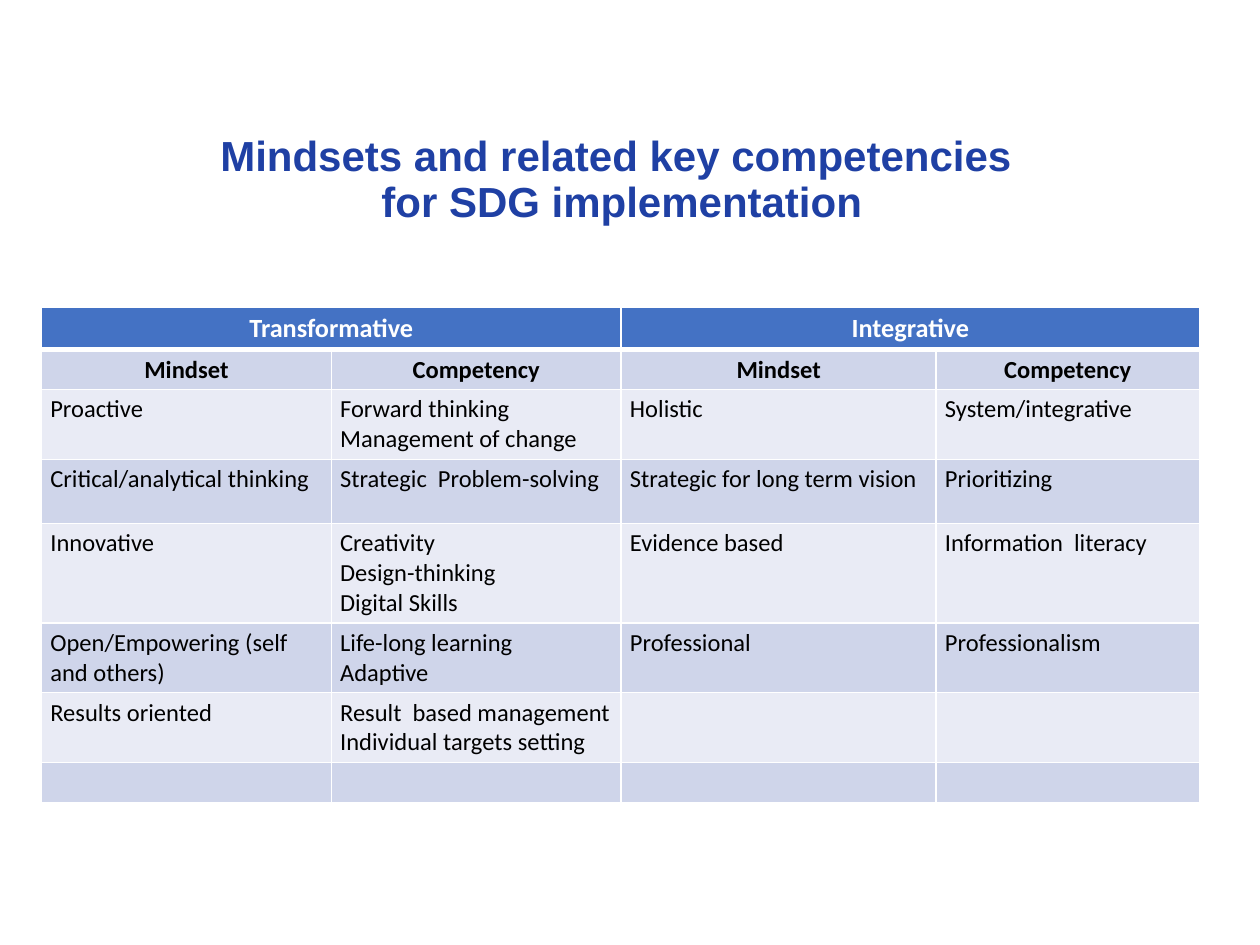
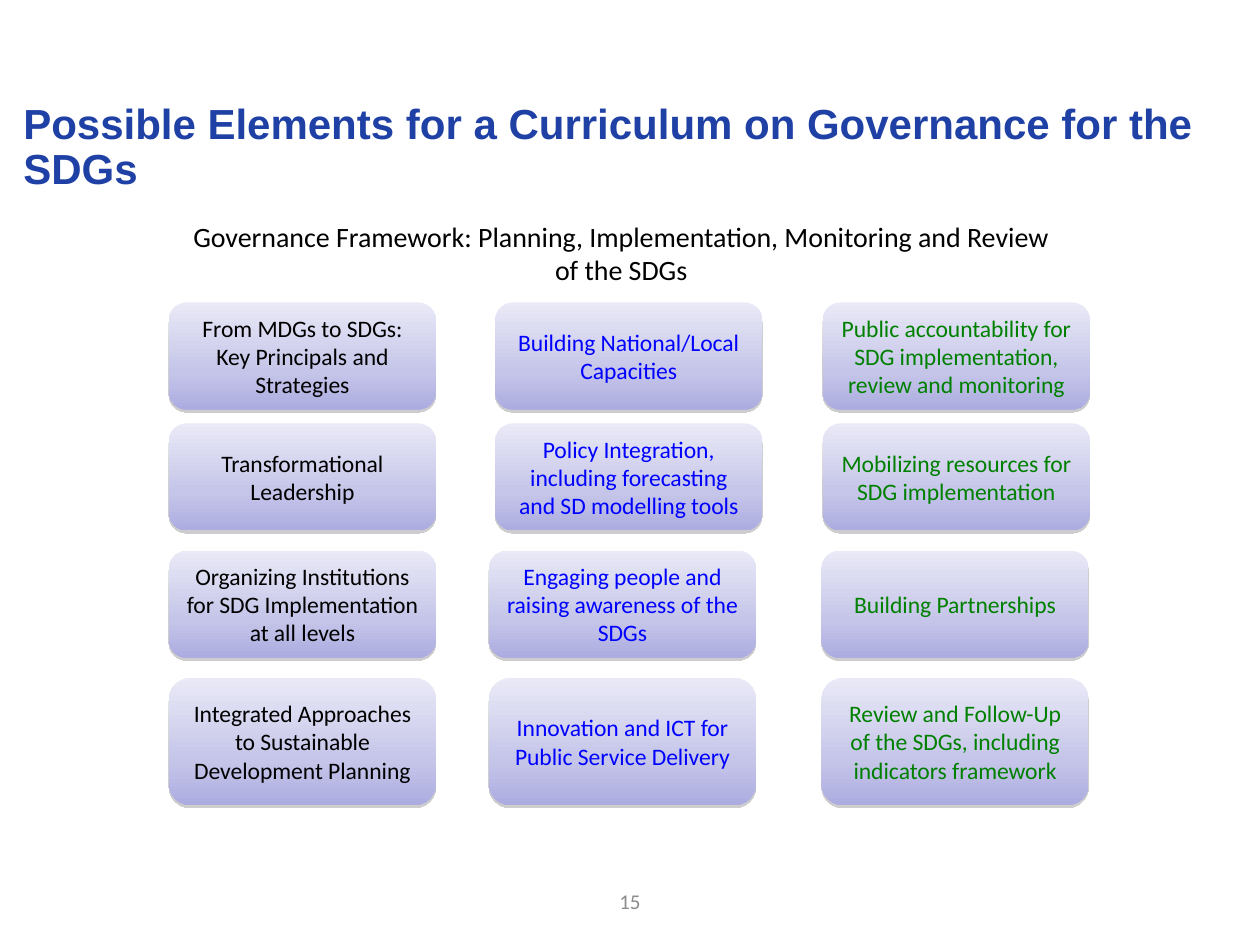
from dataclasses import dataclass
from typing import Any, Sequence

import lxml.etree
import pptx
import pptx.dml.color
import pptx.enum.shapes
import pptx.enum.text
import pptx.oxml
import pptx.oxml.ns
import pptx.util

ALIGN = pptx.enum.text.PP_ALIGN
ANCHOR = pptx.enum.text.MSO_ANCHOR
TITLE_ONLY_LAYOUT = 5
SLIDE_WIDTH, SLIDE_HEIGHT = pptx.util.Inches(10), pptx.util.Inches(7.5)
GRID_COLUMNS, GRID_ROWS = 100, 75


@dataclass(frozen=True)
class Theme:
    heading_font: str = "Arial"
    body_font: str = "Calibri"
    title: str = "1F40A4"
    text: str = "000000"
    inverse: str = "FFFFFF"
    muted: str = "8C8C8C"
    capacity: str = "0000FF"
    accountability: str = "008000"
    header_fill: str = "4472C4"
    band_fills: tuple[str, str] = ("CFD5EA", "E9EBF5")
    card_stops: tuple[tuple[int, str], ...] = ((0, "E9E9F7"), (65, "C5C5E9"), (100, "ACACE1"))
    card_shadow: str = "808080"
    title_size: float = 24
    subtitle_size: float = 16
    header_size: float = 15
    table_size: float = 14
    card_size: float = 13.5
    number_size: float = 12


THEME = Theme()


@dataclass(frozen=True)
class TextStyle:
    size: float
    color: str = THEME.text
    name: str = THEME.body_font
    bold: bool = False
    alignment: Any = ALIGN.CENTER
    line_spacing: float = 1.0


@dataclass(frozen=True)
class Area:
    """A rectangle in grid columns and rows."""
    left: float
    top: float
    width: float
    height: float

    def lengths(self) -> tuple[int, int, int, int]:
        return (across(self.left), down(self.top), across(self.width), down(self.height))


@dataclass(frozen=True)
class TopicColumn:
    """Cards of one colour; the lower two may start at another grid column."""
    upper_left: float
    lower_left: float
    color: str
    topics: tuple[str, ...]


@dataclass(frozen=True)
class CardRow:
    top: float
    height: float


CARD_WIDTH = 21.2
CARD_ROWS = (CardRow(24, 8.5), CardRow(33.6, 8.5), CardRow(43.7, 8.5), CardRow(53.8, 10.1))
TOPIC_COLUMNS = (
    TopicColumn(13.4, 13.4, THEME.text, (
        "From MDGs to SDGs:\nKey Principals and Strategies",
        "Transformational Leadership",
        "Organizing Institutions for SDG Implementation at all levels",
        "Integrated Approaches to Sustainable Development Planning")),
    TopicColumn(39.3, 38.8, THEME.capacity, (
        "Building National/Local Capacities",
        "Policy Integration, including forecasting and SD modelling tools",
        "Engaging people and raising awareness of the SDGs",
        "Innovation and ICT for Public Service Delivery")),
    TopicColumn(65.3, 65.2, THEME.accountability, (
        "Public accountability for SDG implementation, review and monitoring",
        "Mobilizing resources for SDG implementation",
        "Building Partnerships",
        "Review and Follow-Up of the SDGs, including indicators framework")),
)

TABLE_AREA = Area(3.3, 24.4, 91.9, 37.9)
TABLE_COLUMNS = (23, 23, 25, 20.9)
TABLE_ROWS = (3.3, 3, 5.3, 5.1, 7.5, 5.4, 5.3, 3)
COMPETENCIES = (
    ("Transformative", "", "Integrative", ""),
    ("Mindset", "Competency") * 2,
    ("Proactive", "Forward thinking\nManagement of change", "Holistic", "System/integrative"),
    ("Critical/analytical thinking", "Strategic  Problem-solving",
     "Strategic for long term vision", "Prioritizing"),
    ("Innovative", "Creativity\nDesign-thinking\nDigital Skills",
     "Evidence based", "Information  literacy"),
    ("Open/Empowering (self and others)", "Life-long learning\nAdaptive",
     "Professional", "Professionalism"),
    ("Results oriented", "Result  based management\nIndividual targets setting", "", ""),
    ("",) * 4,
)


def across(columns: float) -> int:
    return round(SLIDE_WIDTH * columns / GRID_COLUMNS)


def down(rows: float) -> int:
    return round(SLIDE_HEIGHT * rows / GRID_ROWS)


def rgb(color: str) -> pptx.dml.color.RGBColor:
    return pptx.dml.color.RGBColor.from_string(color)


def add_element(parent: Any, tag: str, **attributes: Any) -> Any:
    values = {key: str(value) for key, value in attributes.items()}
    return lxml.etree.SubElement(parent, pptx.oxml.ns.qn(tag), values)


def apply(target: Any, values: dict[str, Any]) -> None:
    for name, value in values.items():
        setattr(target, name, value)


def write(frame: Any, text: str, style: TextStyle) -> None:
    """Fill a text frame, one paragraph for each line of text."""
    frame.word_wrap = True
    for index, line in enumerate(text.split("\n")):
        paragraph = frame.paragraphs[0] if index == 0 else frame.add_paragraph()
        apply(paragraph, {"alignment": style.alignment, "line_spacing": style.line_spacing})
        if not line:
            add_element(paragraph._p, "a:endParaRPr", sz=round(style.size * 100))
            continue
        paragraph.text = line
        for run in paragraph.runs:
            apply(run.font, {"name": style.name, "size": pptx.util.Pt(style.size),
                             "bold": style.bold})
            run.font.color.rgb = rgb(style.color)


def add_titled_slide(presentation: Any, title: str, area: Area, alignment: Any) -> Any:
    slide = presentation.slides.add_slide(presentation.slide_layouts[TITLE_ONLY_LAYOUT])
    shape = slide.shapes.title
    apply(shape, dict(zip(("left", "top", "width", "height"), area.lengths())))
    apply(shape.text_frame, {"vertical_anchor": ANCHOR.MIDDLE,
                             "auto_size": pptx.enum.text.MSO_AUTO_SIZE.NONE})
    write(shape.text_frame, title, TextStyle(
        THEME.title_size, THEME.title, THEME.heading_font, True, alignment, 0.9))
    return slide


def add_text(slide: Any, text: str, area: Area, style: TextStyle, anchor: Any) -> None:
    frame = slide.shapes.add_textbox(*area.lengths()).text_frame
    frame.vertical_anchor = anchor
    write(frame, text, style)


def add_cell_borders(cell: Any, bottom_width: float) -> None:
    properties = cell._tc.get_or_add_tcPr()
    for side, width in (("L", 1), ("R", 1), ("T", 1), ("B", bottom_width)):
        line = add_element(properties, f"a:ln{side}", w=pptx.util.Pt(width))
        add_element(add_element(line, "a:solidFill"), "a:srgbClr", val=THEME.inverse)


def add_competency_table(slide: Any, rows: Sequence[Sequence[str]]) -> None:
    table = slide.shapes.add_table(
        len(rows), len(TABLE_COLUMNS), *TABLE_AREA.lengths()).table
    for column, width in zip(table.columns, TABLE_COLUMNS):
        column.width = across(width)
    for row, height in zip(table.rows, TABLE_ROWS):
        row.height = down(height)
    styles = (TextStyle(THEME.header_size, THEME.inverse, bold=True),
              TextStyle(THEME.table_size, bold=True))
    body_style = TextStyle(THEME.table_size, alignment=ALIGN.LEFT)
    for row_index, texts in enumerate(rows):
        style = styles[row_index] if row_index < len(styles) else body_style
        fill = THEME.band_fills[(row_index + 1) % 2] if row_index else THEME.header_fill
        for column_index, text in enumerate(texts):
            cell = table.cell(row_index, column_index)
            apply(cell, {"margin_left": across(0.7), "margin_right": across(0.7),
                         "margin_top": down(0.4), "margin_bottom": down(0.4)})
            add_cell_borders(cell, 1 if row_index else 3)
            cell.fill.solid()
            cell.fill.fore_color.rgb = rgb(fill)
            write(cell.text_frame, text, style)
    for first in (0, 2):
        table.cell(0, first).merge(table.cell(0, first + 1))


def add_card(slide: Any, text: str, area: Area, color: str) -> None:
    shape = slide.shapes.add_shape(
        pptx.enum.shapes.MSO_SHAPE.ROUNDED_RECTANGLE, *area.lengths())
    shape.line.fill.background()
    shape.fill.gradient()
    shape.fill.gradient_angle = 270
    properties = shape._element.spPr
    stops = properties.find(".//" + pptx.oxml.ns.qn("a:gsLst"))
    for stop in list(stops):
        stops.remove(stop)
    for position, stop_color in THEME.card_stops:
        stop = add_element(stops, "a:gs", pos=position * 1000)
        add_element(stop, "a:srgbClr", val=stop_color)
    shape.shadow.inherit = False
    effects = properties.find(pptx.oxml.ns.qn("a:effectLst"))
    shadow = add_element(effects, "a:outerShdw", blurRad=0, dist=pptx.util.Pt(1.6),
                         dir=5400000, rotWithShape=0)
    shadow_color = add_element(shadow, "a:srgbClr", val=THEME.card_shadow)
    add_element(shadow_color, "a:alpha", val=38000)
    shape.text_frame.vertical_anchor = ANCHOR.MIDDLE
    write(shape.text_frame, text, TextStyle(THEME.card_size, color))


def build_mindsets_slide(presentation: Any) -> None:
    slide = add_titled_slide(
        presentation, "Mindsets and related key competencies \vfor SDG implementation",
        Area(0, 8.9, 98.7, 10.9), ALIGN.CENTER)
    add_competency_table(slide, COMPETENCIES)


def build_curriculum_slide(presentation: Any) -> None:
    slide = add_titled_slide(
        presentation, "Possible Elements for a Curriculum on Governance for the SDGs",
        Area(1.1, 7.1, 97.6, 9.4), ALIGN.LEFT)
    apply(slide.shapes.title.text_frame, {
        "margin_left": across(0.75), "margin_right": across(0.75),
        "margin_top": down(0.4), "margin_bottom": down(0.4)})
    add_text(slide, "Governance Framework: Planning, Implementation, Monitoring and Review "
             "of the SDGs", Area(13.7, 16.9, 71.2, 6.4),
             TextStyle(THEME.subtitle_size), ANCHOR.TOP)
    for column in TOPIC_COLUMNS:
        for index, (row, topic) in enumerate(zip(CARD_ROWS, column.topics)):
            left = column.upper_left if index < 2 else column.lower_left
            add_card(slide, topic, Area(left, row.top, CARD_WIDTH, row.height), column.color)
    add_text(slide, "15", Area(33.1, 69.5, 33.8, 4),
             TextStyle(THEME.number_size, THEME.muted), ANCHOR.MIDDLE)


def main() -> None:
    presentation = pptx.Presentation()
    apply(presentation, {"slide_width": SLIDE_WIDTH, "slide_height": SLIDE_HEIGHT})
    build_mindsets_slide(presentation)
    build_curriculum_slide(presentation)
    presentation.save("out.pptx")


if __name__ == "__main__":
    main()
